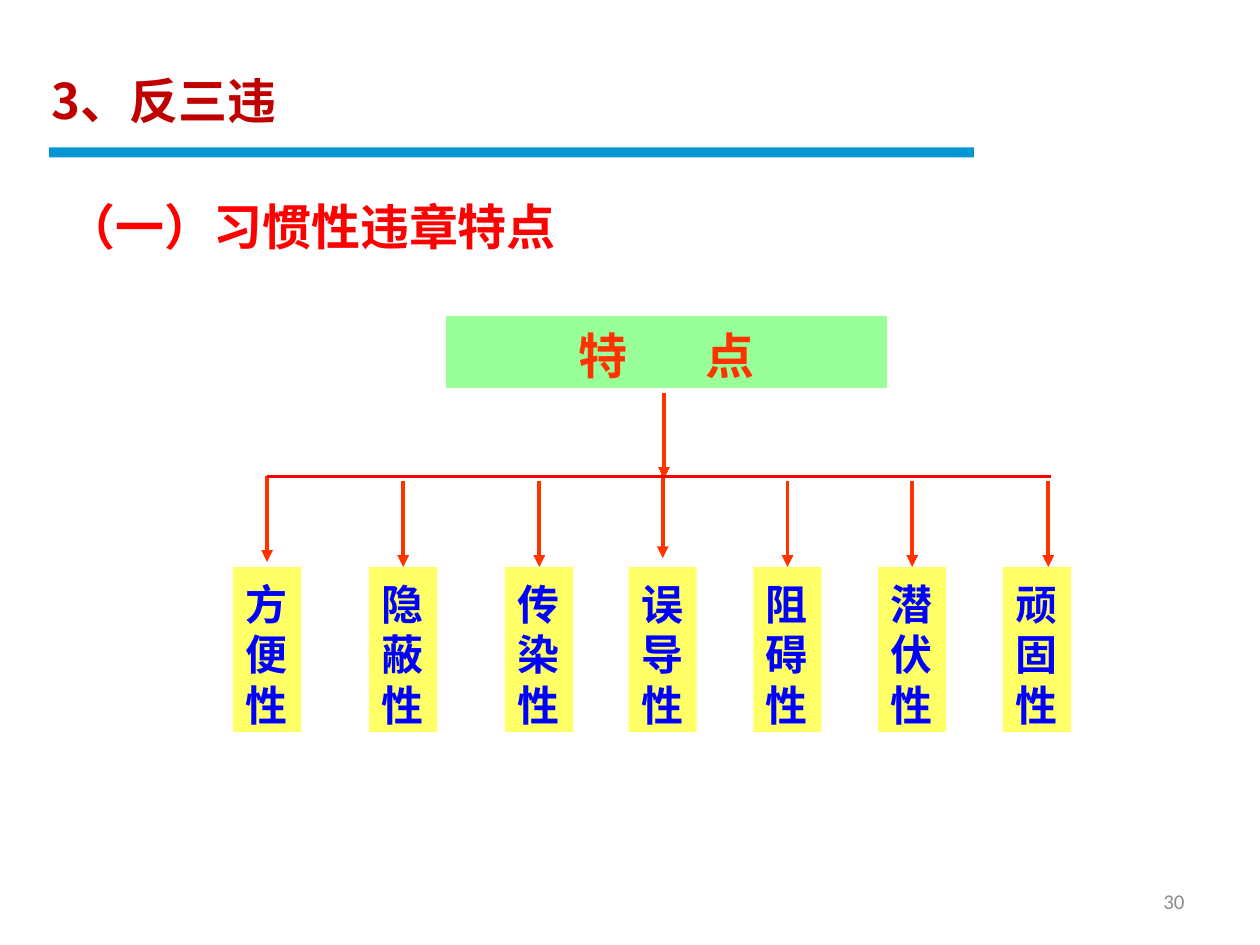
from lxml.etree import SubElement
from pptx import Presentation
from pptx.dml.color import RGBColor
from pptx.enum.shapes import MSO_CONNECTOR as Connector, MSO_SHAPE as Shape
from pptx.enum.text import MSO_ANCHOR as Anchor, PP_ALIGN as Align
from pptx.oxml.ns import qn
from pptx.util import Inches, Pt

COLORS = {
    "title": "C00000", "heading": "FF0000", "rule": "0595D4",
    "root_fill": "99FF99", "root_text": "FF3300",
    "trait_fill": "FFFF66", "trait_text": "0000FF",
    "arrow": "FF3300", "bar": "FF0000", "number": "8C8C8C",
}
CHINESE_FONT = "Noto Sans CJK SC"
TOP, BAR_Y = 0, 3.78


class SlideBuilder:
    def __init__(self, slide):
        self.slide = slide

    def fill_text(self, shape, lines, color, size=28, font=CHINESE_FONT, bold=True,
                  align=Align.LEFT, anchor=Anchor.TOP, wrap=True, spacing=1.2):
        """Each line is a string or a list of (text, tracking in points) runs."""
        frame = shape.text_frame
        frame_format = {"word_wrap": wrap, "vertical_anchor": anchor}
        if spacing:
            frame_format["margin_top"] = Inches(0.09)
        for name, value in frame_format.items():
            setattr(frame, name, value)
        run_format = {"name": font, "size": Pt(size), "bold": bold}
        for index, line in enumerate(lines):
            paragraph = frame.add_paragraph() if index else frame.paragraphs[0]
            paragraph.alignment = align
            if spacing:
                paragraph.line_spacing = Pt(size * spacing)
            for text, tracking in [(line, 0)] if isinstance(line, str) else line:
                run = paragraph.add_run()
                run.text = text
                for name, value in run_format.items():
                    setattr(run.font, name, value)
                run.font.color.rgb = RGBColor.from_string(COLORS[color])
                properties = run._r.get_or_add_rPr()
                SubElement(properties, qn("a:ea")).set("typeface", font)
                if tracking:
                    properties.set("spc", str(tracking * 100))

    def text(self, left, top, width, height, lines, color, **style):
        box = self.slide.shapes.add_textbox(*map(Inches, (left, top, width, height)))
        self.fill_text(box, lines, color, **style)

    def rectangle(self, left, top, width, height, fill):
        shape = self.slide.shapes.add_shape(
            Shape.RECTANGLE, *map(Inches, (left, top, width, height)))
        shape.shadow.inherit = False
        shape.fill.solid()
        shape.fill.fore_color.rgb = RGBColor.from_string(COLORS[fill])
        shape.line.fill.background()
        return shape

    def line(self, start, end, color, weight, arrow=False, target=None):
        connector = self.slide.shapes.add_connector(
            Connector.STRAIGHT, *map(Inches, (*start, *end)))
        connector.line.color.rgb = RGBColor.from_string(COLORS[color])
        connector.line.width = Pt(weight)
        if arrow:
            line_element = connector.line._get_or_add_ln()
            SubElement(line_element, qn("a:tailEnd")).set("type", "triangle")
        SubElement(connector._element.spPr, qn("a:effectLst"))
        if target is not None:
            connector.end_connect(target, TOP)


def main():
    presentation = Presentation()
    presentation.slide_width, presentation.slide_height = Inches(10), Inches(7.5)
    builder = SlideBuilder(presentation.slides.add_slide(presentation.slide_layouts[6]))

    # Title, rule and heading
    builder.rectangle(0.39, 1.17, 7.34, 0.08, "rule")
    builder.text(0.31, 0.47, 7.5, 0.57, ["3、反三违"], "title")
    builder.text(0.43, 1.47, 5.67, 0.57, ["（一）习惯性违章特点"], "heading")

    # Root box, its two characters set apart by a tracked space
    root = builder.rectangle(3.54, 2.51, 3.5, 0.57, "root_fill")
    builder.fill_text(root, [[("特", 0), (" ", 38), ("点", 0)]], "root_text",
                      align=Align.CENTER, anchor=Anchor.MIDDLE)

    # Trait boxes: text, left edge, arrow x, arrow start y
    traits = [
        ("方便性", 1.85, 2.12, 3.78), ("隐蔽性", 2.93, 3.2, 3.82),
        ("传染性", 4.01, 4.28, 3.82), ("误导性", 4.99, 5.26, 3.75),
        ("阻碍性", 5.98, 6.25, 3.82), ("潜伏性", 6.97, 7.24, 3.82),
        ("顽固性", 7.96, 8.32, 3.82),
    ]
    box_top, box_width, arrow_length = 4.5, 0.54, 0.68
    for name, left, x, start in traits:
        box = builder.rectangle(left, box_top, box_width, 1.31, "trait_fill")
        builder.fill_text(box, list(name), "trait_text", size=24, wrap=False)
        end = round(start + arrow_length, 2)
        touches = end == box_top and round(left + box_width / 2, 2) == x
        builder.line((x, start), (x, end), "arrow", 2.25, arrow=True,
                     target=box if touches else None)

    # Trunk arrow and distribution bar
    builder.line((5.27, 3.12), (5.27, 3.8), "arrow", 2.25, arrow=True)
    builder.line((2.12, BAR_Y), (8.34, BAR_Y), "bar", 1.75)

    # Page number
    builder.text(7.17, 6.95, 2.33, 0.4, ["30"], "number", size=12, font="Calibri",
                 bold=False, align=Align.RIGHT, anchor=Anchor.MIDDLE, spacing=None)

    presentation.save("out.pptx")


if __name__ == "__main__":
    main()
